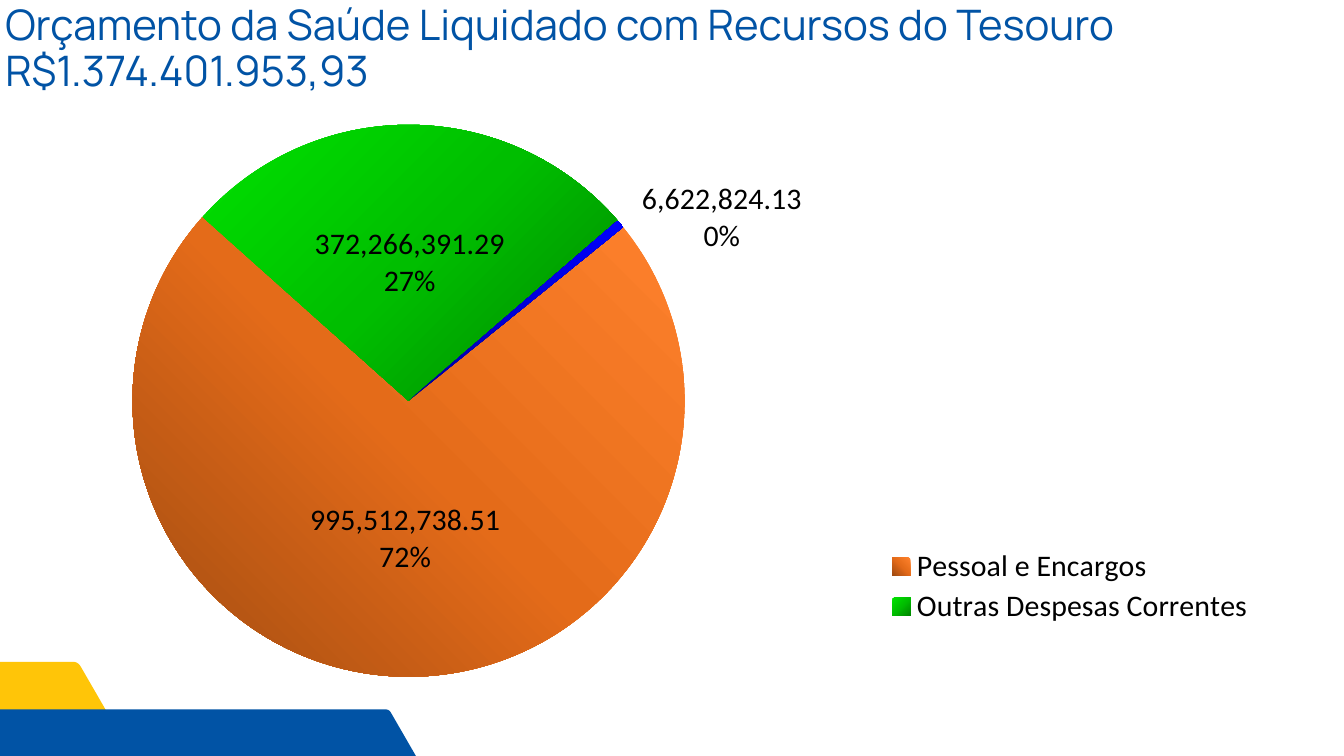
from math import hypot, radians, tan

from pptx import Presentation
from pptx.chart.data import CategoryChartData
from pptx.dml.color import RGBColor
from pptx.enum.chart import XL_CHART_TYPE, XL_LABEL_POSITION, XL_LEGEND_POSITION
from pptx.enum.text import MSO_ANCHOR
from pptx.oxml import parse_xml
from pptx.oxml.ns import nsdecls
from pptx.util import Cm, Pt

# Content
TITLE = "Orçamento da Saúde Liquidado com Recursos do Tesouro R$1.374.401.953,93"
EXPENSES = [
    ("Pessoal e Encargos", 995512738.51),
    ("Outras Despesas Correntes", 372266391.29),
    ("", 6622824.13),
]
SMALL_SLICE = 2  # labelled outside the pie, not listed in the legend

THEME = {
    "blue": "0153A5",
    "yellow": "FFC508",
    "text": "000000",
    "title_font": "Manrope",
    "title_size": 45,
    "title_leading": 49.5,
    "chart_font": "Calibri",
    "chart_size": 32,
}

# Slice gradients: three stops, then the direction
CORNER = '<a:path path="circle"><a:fillToRect {}/></a:path>'
GRADIENTS = [
    (("A04B11", "E46B19", "FF822D"), CORNER.format('t="100000" r="100000"')),
    (("008600", "00BE00", "00E200"), CORNER.format('l="100000" t="100000"')),
    (("000097", "0000D7", "0000FF"), '<a:lin ang="16200000" scaled="0"/>'),
]

# Corner hexagons in cm: left, top, right, bottom, corner cut, colour
HEXAGONS = [
    (-6.95, 25.02, 4.69, 31.06, 0.2, "yellow"),
    (-6.18, 26.82, 17.08, 35.05, 0.13, "blue"),
]


def colour(name):
    return RGBColor.from_string(THEME[name])


def rounded(corners, cut, steps=6):
    """Replace every corner by a short quadratic curve."""
    points = []
    for index, (x, y) in enumerate(corners):
        ends = []
        for other_x, other_y in (corners[index - 1], corners[(index + 1) % len(corners)]):
            share = cut / hypot(other_x - x, other_y - y)
            ends.append((x + (other_x - x) * share, y + (other_y - y) * share))
        (start_x, start_y), (end_x, end_y) = ends
        for step in range(steps + 1):
            t = step / steps
            a, b, c = (1 - t) ** 2, 2 * t * (1 - t), t ** 2
            points.append((a * start_x + b * x + c * end_x, a * start_y + b * y + c * end_y))
    return points


def add_hexagon(page, left, top, right, bottom, cut, fill):
    middle = (top + bottom) / 2
    inset = (middle - top) / tan(radians(60))
    corners = [
        (left + inset, top), (right - inset, top), (right, middle),
        (right - inset, bottom), (left + inset, bottom), (left, middle),
    ]
    points = [(Cm(x), Cm(y)) for x, y in rounded(corners, cut)]
    builder = page.shapes.build_freeform(*points[0])
    builder.add_line_segments(points[1:], close=True)
    shape = builder.convert_to_shape()
    shape.shadow.inherit = False
    shape.fill.solid()
    shape.fill.fore_color.rgb = colour(fill)
    shape.line.fill.background()


def add_title(page):
    box = page.shapes.add_textbox(Cm(0.2), Cm(0.1), Cm(50.17), Cm(3.58))
    frame = box.text_frame
    frame.word_wrap = True
    frame.vertical_anchor = MSO_ANCHOR.TOP
    frame.margin_left = frame.margin_top = frame.margin_right = frame.margin_bottom = 0
    para = frame.paragraphs[0]
    para.line_spacing = Pt(THEME["title_leading"])
    span = para.add_run()
    span.text = TITLE
    span.font.name = THEME["title_font"]
    span.font.size = Pt(THEME["title_size"])
    span.font.color.rgb = colour("blue")


def chart_xml(tag, content):
    return parse_xml(f'<c:{tag} {nsdecls("c")}>{content}</c:{tag}>')


def layout_xml(inner=False, **percents):
    """Place a chart part, in percent of the chart's width and height."""
    target = '<c:layoutTarget val="inner"/>' if inner else ""
    modes = '<c:xMode val="edge"/><c:yMode val="edge"/>' if "w" in percents else ""
    values = "".join(f'<c:{key} val="{value / 100:.4f}"/>' for key, value in percents.items())
    return chart_xml("layout", f"<c:manualLayout>{target}{modes}{values}</c:manualLayout>")


def gradient_xml(stops, direction):
    inner = "".join(
        f'<a:gs pos="{index * 50000}"><a:srgbClr val="{stop}"/></a:gs>'
        for index, stop in enumerate(stops)
    )
    return parse_xml(
        f'<a:gradFill {nsdecls("a")} rotWithShape="1"><a:gsLst>{inner}</a:gsLst>{direction}</a:gradFill>'
    )


def add_pie(page):
    data = CategoryChartData(number_format="#,##0.00")
    data.categories = [name for name, _ in EXPENSES]
    data.add_series("", [value for _, value in EXPENSES])
    chart = page.shapes.add_chart(
        XL_CHART_TYPE.PIE, Cm(0.3), Cm(3.68), Cm(50.06), Cm(22.56), data
    ).chart
    chart.has_title = False
    chart.font.name = THEME["chart_font"]
    chart.font.size = Pt(THEME["chart_size"])
    chart.font.color.rgb = colour("text")
    root = chart._chartSpace

    # Pie place and rotation
    area = root.xpath(".//c:plotArea")[0]
    for old in area.xpath("./c:layout"):
        area.remove(old)
    area.insert(0, layout_xml(inner=True, x=8.2, y=4.6, w=44.1, h=92.5))
    angle = parse_xml(f'<c:firstSliceAng {nsdecls("c")} val="51"/>')
    root.xpath(".//c:pieChart")[0].append(angle)

    # Slice fills
    series = chart.plots[0].series[0]
    for index in range(len(EXPENSES)):
        look = series.points[index].format
        look.fill.gradient()
        look.line.fill.background()
    for old, gradient in zip(root.xpath(".//c:dPt/c:spPr/a:gradFill"), GRADIENTS):
        old.getparent().replace(old, gradient_xml(*gradient))

    # Value and percentage labels, the small slice outside
    labels = series.data_labels
    labels.position = XL_LABEL_POSITION.CENTER
    labels.show_value = labels.show_percentage = True
    series.points[SMALL_SLICE].data_label.position = XL_LABEL_POSITION.OUTSIDE_END
    outside = root.xpath(".//c:dLbl")[0]
    outside.xpath("./c:showPercent")[0].set("val", "1")
    outside.xpath("./c:idx")[0].addnext(layout_xml(x=1.4, y=5.6))
    for flag in root.xpath(".//c:ser//c:showBubbleSize"):
        flag.addnext(chart_xml("separator", "\n"))
    for flag in root.xpath(".//c:ser//c:showLeaderLines"):
        flag.set("val", "0")

    # Legend
    chart.has_legend = True
    legend = chart.legend
    legend.position = XL_LEGEND_POSITION.RIGHT
    legend.include_in_layout = False
    place = root.xpath(".//c:legend/c:legendPos")[0]
    for old in root.xpath(".//c:legend/c:layout"):
        old.getparent().remove(old)
    place.addnext(layout_xml(x=65.7, y=75, w=29, h=14))
    place.addnext(chart_xml("legendEntry", f'<c:idx val="{SMALL_SLICE}"/><c:delete val="1"/>'))


def main():
    deck = Presentation()
    deck.slide_width, deck.slide_height = Cm(50.8), Cm(28.58)
    page = deck.slides.add_slide(deck.slide_layouts[6])
    for hexagon in HEXAGONS:
        add_hexagon(page, *hexagon)
    add_pie(page)
    add_title(page)
    deck.save("out.pptx")


if __name__ == "__main__":
    main()
